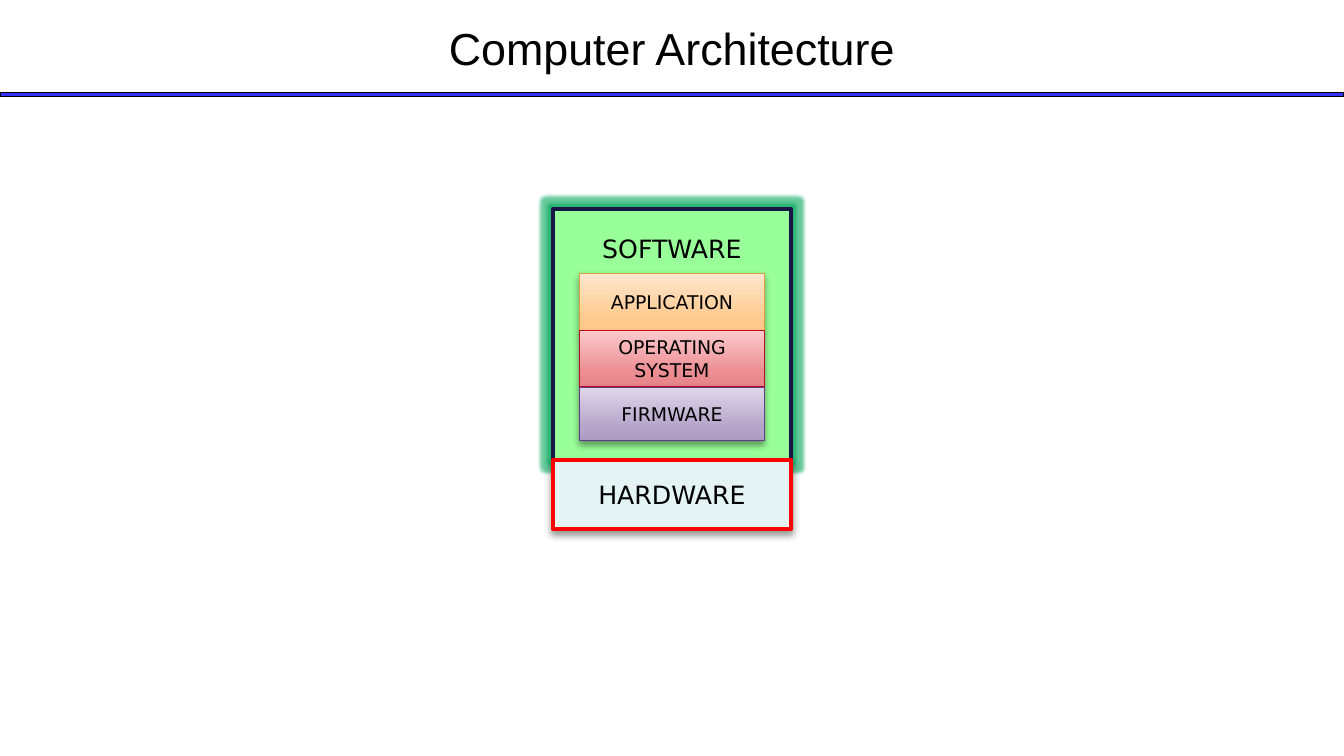
from lxml.etree import SubElement
from pptx import Presentation
from pptx.dml.color import RGBColor
from pptx.enum.shapes import MSO_SHAPE
from pptx.enum.text import MSO_ANCHOR, PP_ALIGN
from pptx.oxml.ns import qn
from pptx.util import Inches, Pt

WIDE, HIGH = 13.33, 7.5
STACK = 2.36
LEFT = (WIDE - STACK) / 2
LAYER = 1.83
INNER = (WIDE - LAYER) / 2
COLORS = {
    "ink": "000000",
    "rule": "3333FF",
    "soft": "99FF99",
    "navy": "171745",
    "glow": "00A65A",
    "hard": "E4F3F4",
    "red": "FF0000",
}
LAYERS = [
    ("APPLICATION", 2.71, 0.57, "DB9E3F", ("FFC687", "FFCB92", "FFE7CF")),
    ("OPERATING SYSTEM", 3.28, 0.55, "BC0B1F", ("E68589", "EC8D92", "FBCACC")),
    ("FIRMWARE", 3.84, 0.53, "603C84", ("AD9CC3", "B5A5CA", "DFD7E9")),
]


def paint(fill, color):
    fill.solid()
    fill.fore_color.rgb = RGBColor.from_string(color)


def add_box(shapes, x, y, w, h, line, weight):
    box = shapes.add_shape(
        MSO_SHAPE.RECTANGLE, Inches(x), Inches(y), Inches(w), Inches(h))
    box.shadow.inherit = False
    paint(box.line.fill, line)
    box.line.width = Pt(weight)
    return box


def add_text(shape, text, size, font="DejaVu Sans", top=0.03):
    frame = shape.text_frame
    frame.word_wrap = True
    frame.margin_left = frame.margin_right = frame.margin_bottom = Inches(0.03)
    frame.margin_top = Inches(top)
    frame.vertical_anchor = MSO_ANCHOR.MIDDLE
    para = frame.paragraphs[0]
    para.alignment = PP_ALIGN.CENTER
    run = para.add_run()
    run.text = text
    run.font.size = Pt(size)
    run.font.name = font
    paint(run.font.fill, COLORS["ink"])


def add_color(parent, color, alpha=100):
    node = SubElement(parent, qn("a:srgbClr"), val=color)
    SubElement(node, qn("a:alpha"), val=str(alpha * 1000))


def add_effect(shape, tag, color, alpha, **attrs):
    effects = shape.element.spPr.find(qn("a:effectLst"))
    add_color(SubElement(effects, qn(tag), **attrs), color, alpha)


def add_shadow(shape):
    add_effect(shape, "a:outerShdw", COLORS["ink"], 40, blurRad=str(Pt(5.2)),
               dist=str(Pt(3)), dir="5400000", rotWithShape="0")


def blend(shape, colors):
    shape.fill.gradient()
    shape.fill.gradient_angle = 90
    stops = shape.element.spPr.find(qn("a:gradFill")).find(qn("a:gsLst"))
    for stop in list(stops):
        stops.remove(stop)
    for place, color in zip((0, 25, 100), colors):
        add_color(SubElement(stops, qn("a:gs"), pos=str(place * 1000)), color)


def add_title(shapes, text):
    rule = add_box(shapes, 0, 0.92, WIDE, 0.04, COLORS["ink"], 1)
    paint(rule.fill, COLORS["rule"])
    title = shapes.add_textbox(
        Inches(WIDE * 0.05), Inches(0.15), Inches(WIDE * 0.9), Inches(0.64))
    add_text(title, text, 32, "Arial")


def add_soft(shapes):
    box = add_box(shapes, LEFT, 2.07, STACK, 2.49, COLORS["navy"], 3)
    paint(box.fill, COLORS["soft"])
    add_effect(box, "a:glow", COLORS["glow"], 60, rad=str(Pt(5)))
    add_text(box, "SOFTWARE", 18, top=0.24)
    box.text_frame.vertical_anchor = MSO_ANCHOR.TOP


def add_layers(shapes):
    group = shapes.add_group_shape()
    for text, y, h, line, colors in LAYERS:
        box = add_box(group.shapes, INNER, y, LAYER, h, line, 0.75)
        blend(box, colors)
        add_shadow(box)
        add_text(box, text, 13.5)


def add_hard(shapes):
    box = add_box(shapes, LEFT, 4.56, STACK, 0.69, COLORS["red"], 3)
    paint(box.fill, COLORS["hard"])
    add_shadow(box)
    add_text(box, "HARDWARE", 18)


def main():
    deck = Presentation()
    deck.slide_width, deck.slide_height = Inches(WIDE), Inches(HIGH)
    shapes = deck.slides.add_slide(deck.slide_layouts[6]).shapes
    add_title(shapes, "Computer Architecture")
    add_soft(shapes)
    add_layers(shapes)
    add_hard(shapes)
    deck.save("out.pptx")


if __name__ == "__main__":
    main()
